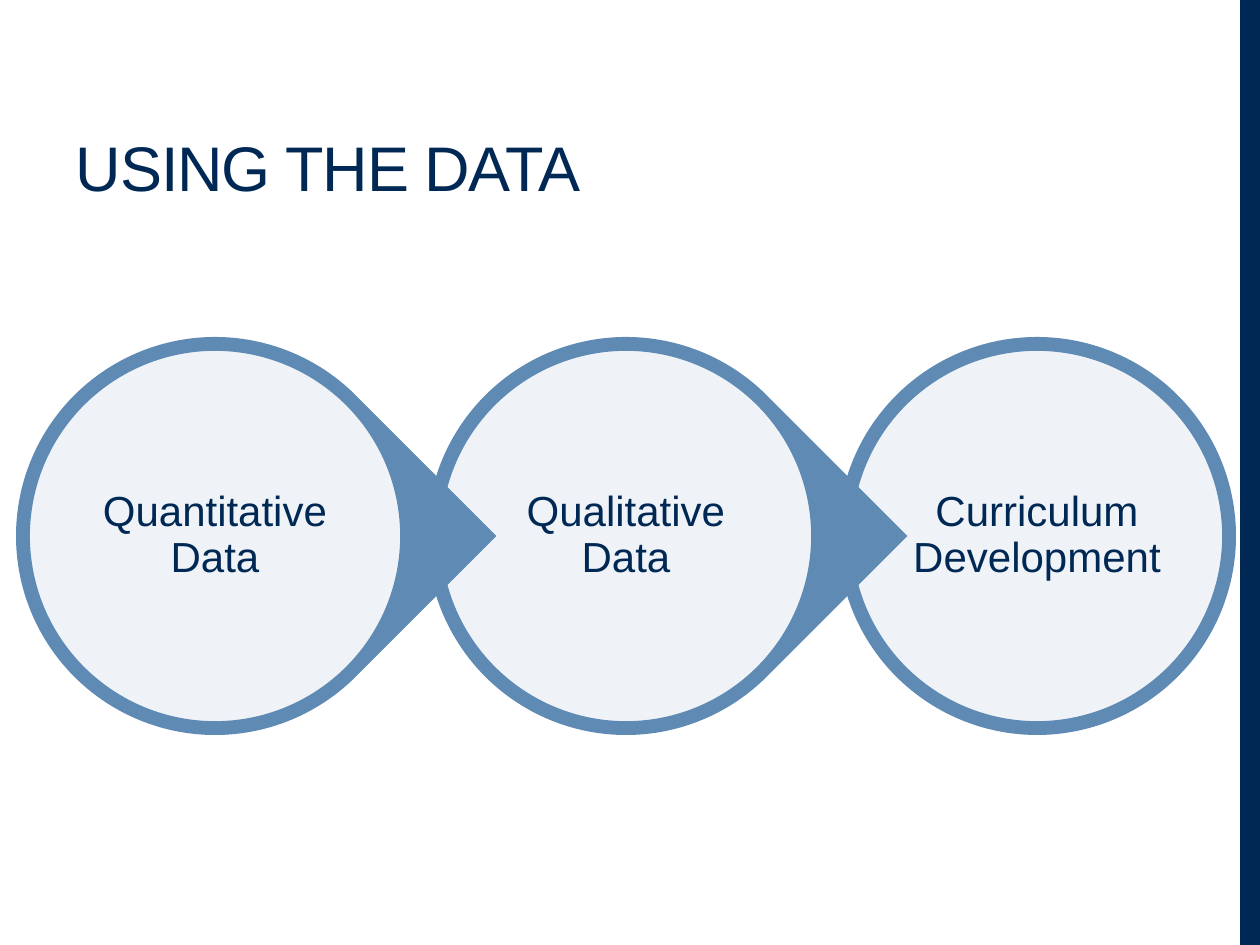
from lxml import etree
from pptx import Presentation
from pptx.dml.color import RGBColor
from pptx.enum.shapes import MSO_SHAPE
from pptx.enum.text import MSO_ANCHOR, MSO_AUTO_SIZE, PP_ALIGN
from pptx.oxml.ns import qn
from pptx.util import Emu, Pt

RECT, OVAL, TEAR = MSO_SHAPE.RECTANGLE, MSO_SHAPE.OVAL, MSO_SHAPE.TEAR
LEFT, CENTER = PP_ALIGN.LEFT, PP_ALIGN.CENTER
MIDDLE, BOTTOM = MSO_ANCHOR.MIDDLE, MSO_ANCHOR.BOTTOM
NAVY, BLUE, WHITE = "002855", "5E8AB4", "FFFFFF"
EMU_PER_PX = 914400 / 126


def px(n):
    return Emu(round(n * EMU_PER_PX))


def rgb(color):
    return RGBColor.from_string(color)


def add_shape(s, kind, x, y, w, h, fill, line=None, alpha=None):
    sp = s.shapes.add_shape(kind, px(x), px(y), px(w), px(h))
    sp.shadow.inherit = False
    sp.fill.solid()
    sp.fill.fore_color.rgb = rgb(fill)
    if alpha:
        clr = sp.fill._xPr.find(qn("a:solidFill"))[0]
        etree.SubElement(clr, qn("a:alpha")).set("val", str(alpha * 1000))
    if line:
        sp.line.color.rgb = rgb(line)
        sp.line.width = Pt(1)
    else:
        sp.line.fill.background()
    return sp


def set_text(sp, text, size=24, color=NAVY, align=CENTER, anchor=MIDDLE,
             line_spacing=0.9, tracking=None, inset=None):
    tf = sp.text_frame
    tf.word_wrap = True
    tf.auto_size = MSO_AUTO_SIZE.NONE
    tf.vertical_anchor = anchor
    if inset is not None:
        tf.margin_left = tf.margin_right = px(inset)
        tf.margin_top = tf.margin_bottom = px(inset)
    p = tf.paragraphs[0]
    p.alignment = align
    p.line_spacing = line_spacing
    r = p.add_run()
    r.text = text
    r.font.name = "Arial"
    r.font.size = Pt(size)
    r.font.color.rgb = rgb(color)
    if tracking:
        r.font._element.set("spc", str(round(tracking * 100)))


def add_title(s, text, x, y, w, h):
    sp = s.shapes.title
    sp.left, sp.top, sp.width, sp.height = px(x), px(y), px(w), px(h)
    set_text(sp, text, size=36, align=LEFT, anchor=BOTTOM,
             line_spacing=1.0, tracking=-0.6)


def add_step(s, text, x, y, size, pointed):
    # Outer ring, with a tip towards the next step
    ring = add_shape(s, TEAR if pointed else OVAL, x, y, size, size, BLUE)
    if pointed:
        ring.adjustments[0] = 1
        ring.rotation = 45
    # Pale disc
    rim = 13
    disc = size - 2 * rim
    add_shape(s, OVAL, x + rim, y + rim, disc, disc, WHITE, line=BLUE, alpha=90)
    # Label
    pad = 66
    label = size - 2 * pad
    tb = s.shapes.add_textbox(px(x + pad), px(y + pad), px(label), px(label))
    set_text(tb, text, inset=4)


def add_process(s, steps, x, y, size, pitch):
    # Last step first, so that each tip lies over the step after it
    last = len(steps) - 1
    for i in range(last, -1, -1):
        add_step(s, steps[i], x + i * pitch, y, size, pointed=i < last)


def main():
    prs = Presentation()
    prs.slide_width, prs.slide_height = px(1260), px(945)
    s = prs.slides.add_slide(prs.slide_layouts[5])

    # Side bar
    add_shape(s, RECT, 1240, 0, 20, 945, NAVY)
    add_title(s, "USING THE DATA", 63, 21, 798, 189)
    add_process(s, ["Quantitative Data", "Qualitative Data", "Curriculum Development"],
                x=16, y=337, size=398, pitch=411)

    prs.save("out.pptx")


if __name__ == "__main__":
    main()
